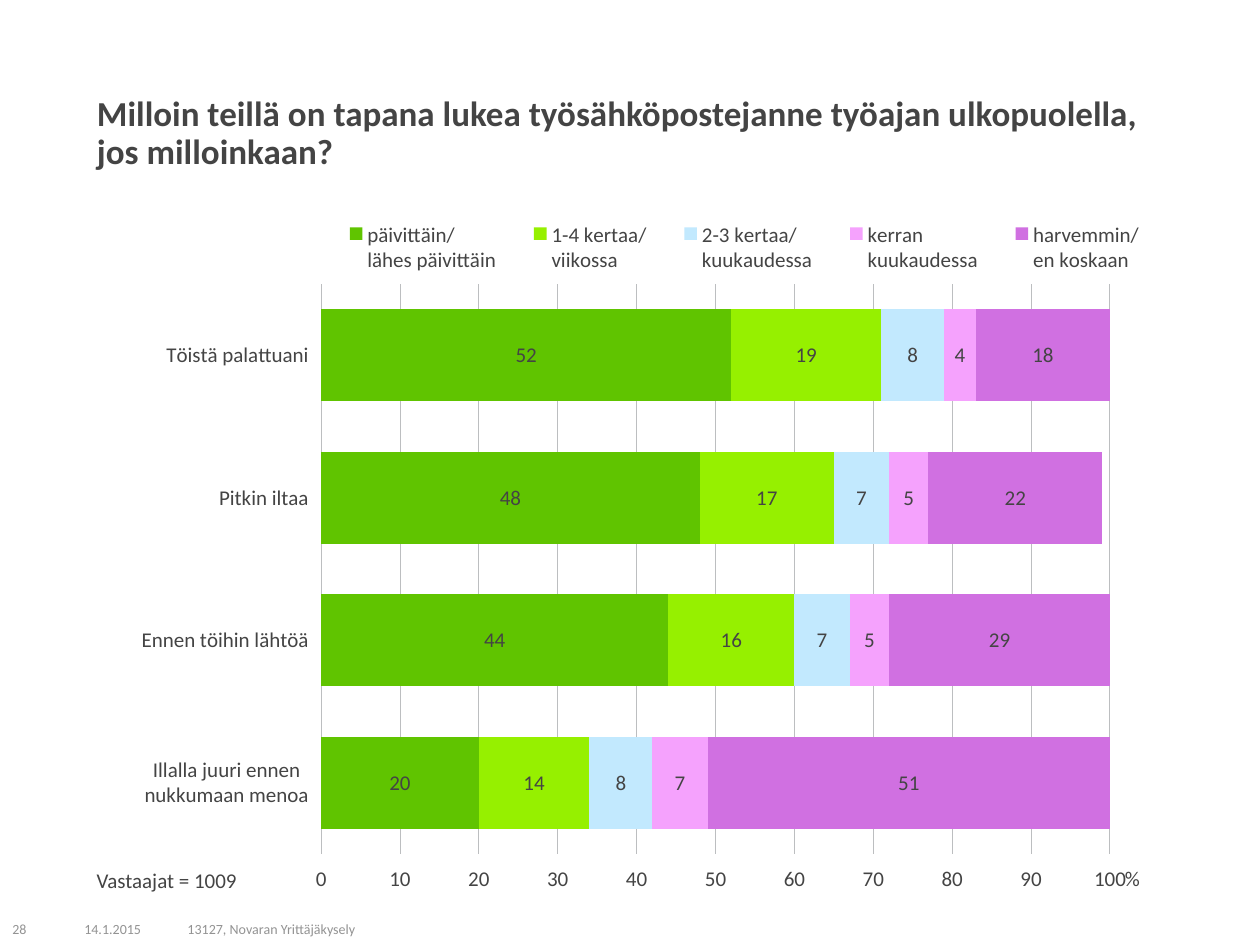
from lxml import etree
from pptx import Presentation
from pptx.chart.data import CategoryChartData
from pptx.dml.color import RGBColor
from pptx.enum.chart import (XL_CHART_TYPE, XL_LABEL_POSITION, XL_LEGEND_POSITION,
                             XL_TICK_LABEL_POSITION, XL_TICK_MARK)
from pptx.enum.text import MSO_ANCHOR, MSO_AUTO_SIZE, PP_ALIGN
from pptx.oxml.ns import qn
from pptx.util import Cm, Pt

STACKED = XL_CHART_TYPE.BAR_STACKED
CENTER = XL_LABEL_POSITION.CENTER
TOP_KEY = XL_LEGEND_POSITION.TOP
NO_TICK = XL_TICK_MARK.NONE
LOW, HIGH = XL_TICK_LABEL_POSITION.LOW, XL_TICK_LABEL_POSITION.HIGH
TOP, MIDDLE = MSO_ANCHOR.TOP, MSO_ANCHOR.MIDDLE

# Content
TITLE = ("Milloin teillä on tapana lukea työsähköpostejanne "
         "työajan ulkopuolella, jos milloinkaan?")
BASE = "Vastaajat = 1009"
TIMES = ["Töistä palattuani", "Pitkin iltaa", "Ennen töihin lähtöä",
         "Illalla juuri ennen nukkumaan menoa"]
SERIES = [
    ("päivittäin/\nlähes päivittäin", (52, 48, 44, 20), "60C400"),
    ("1-4 kertaa/\nviikossa", (19, 17, 16, 14), "96F000"),
    ("2-3 kertaa/\nkuukaudessa", (8, 7, 7, 8), "C2E9FE"),
    ("kerran\nkuukaudessa", (4, 5, 5, 7), "F5A2FD"),
    ("harvemmin/\nen koskaan", (18, 22, 29, 51), "D070E1"),
]
FOOTER = [  # text, left, width
    ("28", 0, 1.14),
    ("14.1.2015", 1.45, 2.08),
    ("13127, Novaran Yrittäjäkysely", 3.53, 8.41),
]

THEME = {"font": "Calibri", "text": "444444", "muted": "939393",
         "grid": "BCBEC0", "title": 20, "body": 12, "small": 8}
LEFT, WIDTH = 1.7, 22


def style(font, size="body", color="text", bold=False):
    font.name = THEME["font"]
    font.size = Pt(THEME[size])
    font.bold = bold
    font.color.rgb = RGBColor.from_string(THEME[color])


def write(shape, text, anchor=TOP, space=None, **look):
    frame = shape.text_frame
    frame.word_wrap = True
    frame.auto_size = MSO_AUTO_SIZE.NONE
    frame.vertical_anchor = anchor
    par = frame.paragraphs[0]
    par.alignment = PP_ALIGN.LEFT
    if space:
        par.line_spacing = space
    run = par.add_run()
    run.text = text
    style(run.font, **look)


def place(part, index, inner=False, **spots):
    """Give a chart part a fixed place, in percent of the chart area."""
    for old in part.findall(qn("c:layout")):
        part.remove(old)
    layout = etree.Element(qn("c:layout"))
    manual = etree.SubElement(layout, qn("c:manualLayout"))
    if inner:
        etree.SubElement(manual, qn("c:layoutTarget")).set("val", "inner")
    for key in ("x", "y"):
        etree.SubElement(manual, qn(f"c:{key}Mode")).set("val", "edge")
    for key, share in spots.items():
        etree.SubElement(manual, qn(f"c:{key}")).set("val", str(share / 100))
    part.insert(index, layout)


def add_bars(slide):
    data = CategoryChartData(number_format="General")
    data.categories = TIMES
    for name, values, _ in SERIES:
        data.add_series(name, values)
    chart = slide.shapes.add_chart(STACKED, Cm(LEFT), Cm(4.21), Cm(WIDTH),
                                   Cm(13.92), data).chart
    style(chart.font)
    chart.has_title = False
    place(chart._chartSpace.chart.plotArea, 0, inner=True,
          x=21.7, y=10.9, w=72.3, h=82.6)

    # Bars and their labels
    plot = chart.plots[0]
    plot.gap_width, plot.overlap = 55, 100
    plot.vary_by_categories = False
    for series, (_, _, color) in zip(plot.series, SERIES):
        series.format.fill.solid()
        series.format.fill.fore_color.rgb = RGBColor.from_string(color)
        labels = series.data_labels
        labels.show_value = True
        labels.position = CENTER
        labels.number_format = "#,##0"
        labels.number_format_is_linked = False
        style(labels.font)

    # Legend
    chart.has_legend = True
    legend = chart.legend
    legend.position = TOP_KEY
    legend.include_in_layout = False
    style(legend.font)
    place(legend._element, 1, x=21.5, y=1.1, w=78, h=9.2)

    # Axes: times run downwards, the scale is read below the bars
    times, scale = chart.category_axis, chart.value_axis
    for axis, side in ((times, LOW), (scale, HIGH)):
        axis.major_tick_mark = axis.minor_tick_mark = NO_TICK
        axis.tick_label_position = side
        axis.format.line.fill.background()
        style(axis.tick_labels.font)
    times.reverse_order = True
    scale.minimum_scale, scale.maximum_scale = 0, 100.01
    scale.major_unit = 10
    scale.tick_labels.number_format = "General"
    scale.tick_labels.number_format_is_linked = False
    scale.has_major_gridlines = True
    grid = scale.major_gridlines.format.line
    grid.width = Pt(0.5)
    grid.color.rgb = RGBColor.from_string(THEME["grid"])

    # Unit after the last scale number
    unit = scale.axis_title
    run = unit.text_frame.paragraphs[0].add_run()
    run.text = "%"
    style(run.font)
    place(unit._element, 1, x=95, y=94.3)


def main():
    deck = Presentation()
    deck.slide_width, deck.slide_height = Cm(25.4), Cm(19.05)
    slide = deck.slides.add_slide(deck.slide_layouts[5])

    # Title
    title = slide.shapes.title
    title.left, title.top = Cm(LEFT), Cm(1.82)
    title.width, title.height = Cm(WIDTH), Cm(1.6)
    write(title, TITLE, space=0.9, size="title", bold=True)

    add_bars(slide)

    # Number of answers
    box = slide.shapes.add_textbox(Cm(LEFT), Cm(17.42), Cm(7.04), Cm(0.71))
    write(box, BASE, space=0.9)

    # Footer
    for text, left, width in FOOTER:
        box = slide.shapes.add_textbox(Cm(left), Cm(18.42), Cm(width), Cm(0.63))
        write(box, text, MIDDLE, size="small", color="muted")

    deck.save("out.pptx")


if __name__ == "__main__":
    main()
